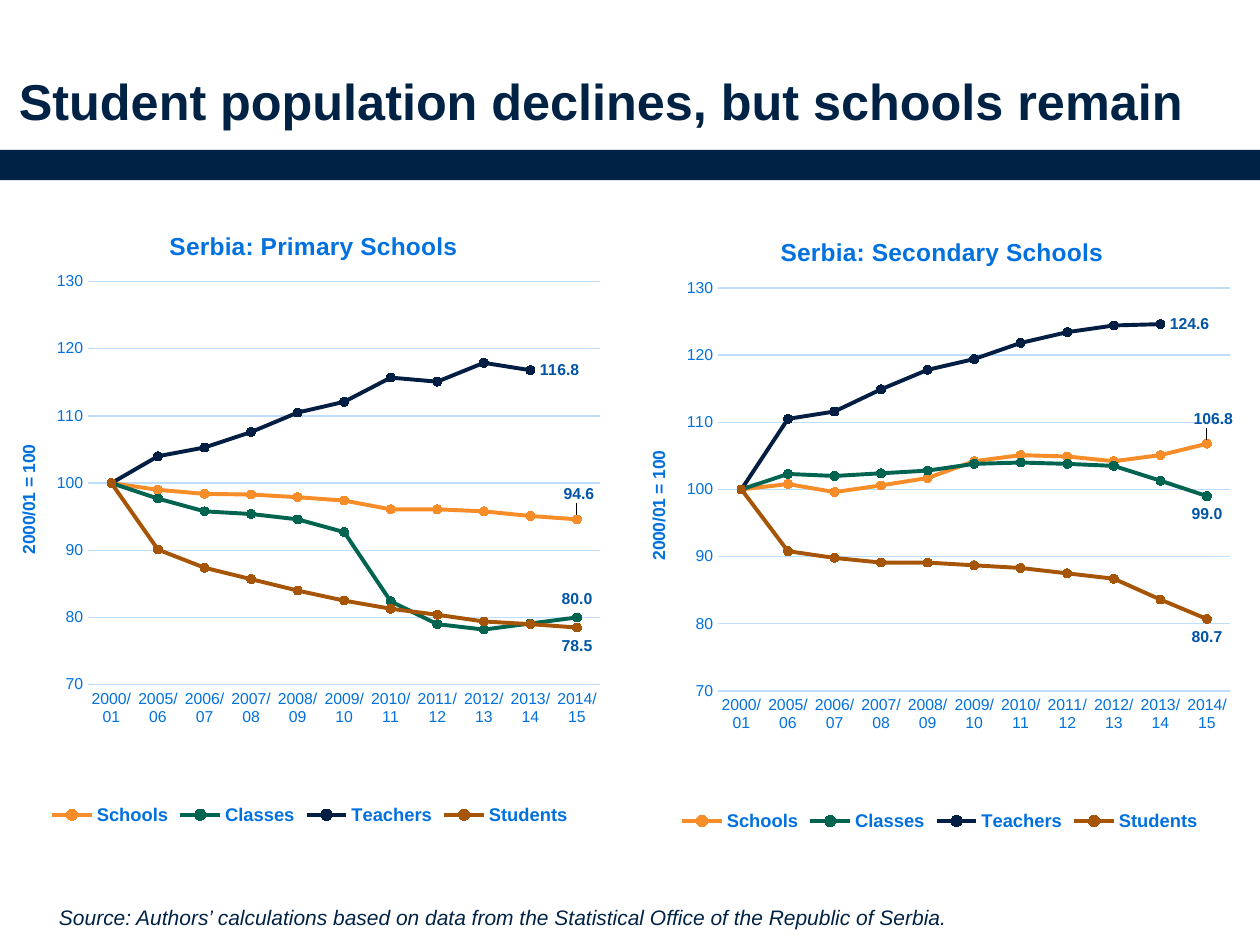
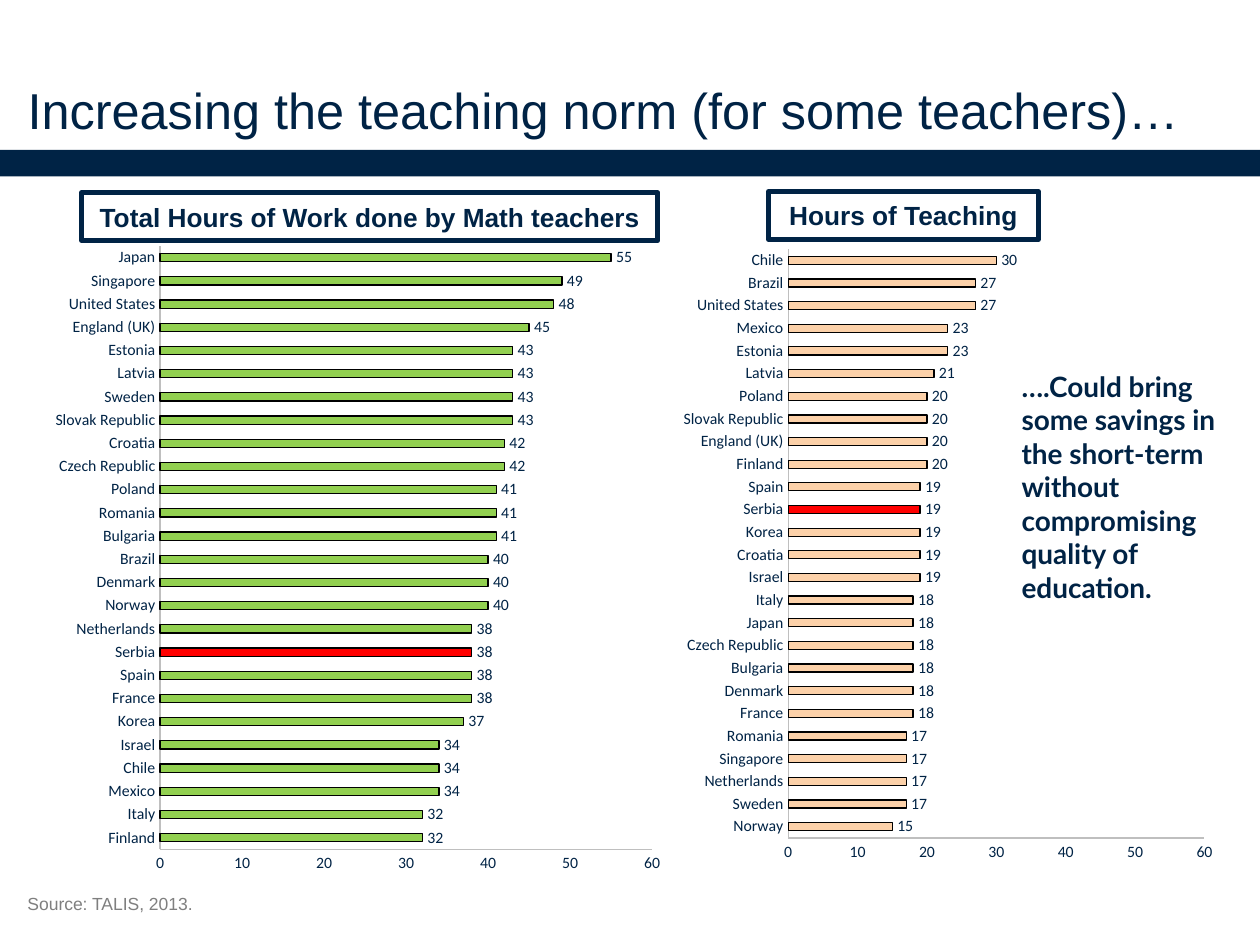
import pptx
import pptx.chart.data
import pptx.dml.color
import pptx.enum.chart
import pptx.enum.shapes
import pptx.enum.text
import pptx.oxml
import pptx.oxml.ns
import pptx.util

RGBColor = pptx.dml.color.RGBColor
Inches = pptx.util.Inches
Pt = pptx.util.Pt
ChartType = pptx.enum.chart.XL_CHART_TYPE
LabelPos = pptx.enum.chart.XL_LABEL_POSITION
Tick = pptx.enum.chart.XL_TICK_MARK
Anchor = pptx.enum.text.MSO_ANCHOR
Align = pptx.enum.text.PP_ALIGN
AutoSize = pptx.enum.text.MSO_AUTO_SIZE

NAVY = RGBColor(0x00, 0x23, 0x45)
BLUE = RGBColor(0x00, 0x71, 0xDF)
LABEL_BLUE = RGBColor(0x00, 0x55, 0xA7)
PALE_BLUE = RGBColor(0xBD, 0xDE, 0xFF)
GRAY = RGBColor(0x7F, 0x7F, 0x7F)
AXIS_GRAY = RGBColor(0xBF, 0xBF, 0xBF)
BLACK = RGBColor(0x00, 0x00, 0x00)
RED = RGBColor(0xFF, 0x00, 0x00)
GREEN = RGBColor(0x92, 0xD0, 0x50)
PEACH = RGBColor(0xFC, 0xD1, 0xA9)
SERIES_COLORS = {
    "Schools": RGBColor(0xF7, 0x8D, 0x28),
    "Classes": RGBColor(0x00, 0x64, 0x50),
    "Teachers": RGBColor(0x02, 0x1F, 0x43),
    "Students": RGBColor(0xA6, 0x54, 0x06),
}

YEARS = ["2000/01"] + [f"{y}/{y - 1999:02d}" for y in range(2005, 2015)]
PRIMARY = {
    "Schools": [100, 99.0, 98.4, 98.3, 97.9, 97.4, 96.1, 96.1, 95.8, 95.1, 94.6],
    "Classes": [100, 97.7, 95.8, 95.4, 94.6, 92.7, 82.4, 79.0, 78.2, 79.1, 80.0],
    "Teachers": [100, 104.0, 105.3, 107.6, 110.5, 112.1, 115.7, 115.1, 117.9, 116.8, None],
    "Students": [100, 90.1, 87.4, 85.7, 84.0, 82.5, 81.3, 80.4, 79.4, 79.0, 78.5],
}
SECONDARY = {
    "Schools": [100, 100.8, 99.6, 100.6, 101.7, 104.2, 105.1, 104.9, 104.2, 105.1, 106.8],
    "Classes": [100, 102.3, 102.0, 102.4, 102.8, 103.8, 104.0, 103.8, 103.5, 101.3, 99.0],
    "Teachers": [100, 110.5, 111.6, 114.9, 117.8, 119.4, 121.8, 123.4, 124.4, 124.6, None],
    "Students": [100, 90.8, 89.8, 89.1, 89.1, 88.7, 88.3, 87.5, 86.7, 83.6, 80.7],
}
WORK_HOURS = {
    "Finland": 32, "Italy": 32, "Mexico": 34, "Chile": 34, "Israel": 34,
    "Korea": 37, "France": 38, "Spain": 38, "Serbia": 38, "Netherlands": 38,
    "Norway": 40, "Denmark": 40, "Brazil": 40, "Bulgaria": 41, "Romania": 41,
    "Poland": 41, "Czech Republic": 42, "Croatia": 42, "Slovak Republic": 43,
    "Sweden": 43, "Latvia": 43, "Estonia": 43, "England (UK)": 45,
    "United States": 48, "Singapore": 49, "Japan": 55,
}
TEACHING_HOURS = {
    "Norway": 15, "Sweden": 17, "Netherlands": 17, "Singapore": 17, "Romania": 17,
    "France": 18, "Denmark": 18, "Bulgaria": 18, "Czech Republic": 18, "Japan": 18,
    "Italy": 18, "Israel": 19, "Croatia": 19, "Korea": 19, "Serbia": 19,
    "Spain": 19, "Finland": 20, "England (UK)": 20, "Slovak Republic": 20,
    "Poland": 20, "Latvia": 21, "Estonia": 23, "Mexico": 23, "United States": 27,
    "Brazil": 27, "Chile": 30,
}


def set_font(font, size, color=NAVY, name="Arial", bold=False, italic=False):
    font.size, font.name = Pt(size), name
    font.bold, font.italic = bold, italic
    font.color.rgb = color


def write(tf, text, align=None, **style):
    p = tf.paragraphs[0]
    p.alignment = align
    r = p.add_run()
    r.text = text
    set_font(r.font, **style)


def set_line(line, color, width=0.75):
    line.color.rgb = color
    line.width = Pt(width)


def set_fill(fill, color):
    fill.solid()
    fill.fore_color.rgb = color


def set_layout(parent, index, **marks):
    """Give a chart part a manual layout; index is its place among the children."""
    for old in parent.findall(pptx.oxml.ns.qn("c:layout")):
        parent.remove(old)
    tags = "".join(f'<c:{k} val="{v}"/>' for k, v in marks.items())
    parent.insert(index, pptx.oxml.parse_xml(
        f'<c:layout {pptx.oxml.ns.nsdecls("c")}>'
        f"<c:manualLayout>{tags}</c:manualLayout></c:layout>"))


class Deck:
    def __init__(self):
        self.prs = pptx.Presentation()
        self.prs.slide_width, self.prs.slide_height = Inches(10), Inches(7.5)
        self.s = None

    def slide(self, title, box, bold=False):
        first = self.s is None
        self.s = self.prs.slides.add_slide(self.prs.slide_layouts[5])
        if first:
            self.share_band()
        sp = self.s.shapes.title
        sp.left, sp.top, sp.width, sp.height = map(Inches, box)
        tf = sp.text_frame
        tf.margin_left = tf.margin_right = tf.margin_top = tf.margin_bottom = 0
        tf.vertical_anchor, tf.auto_size = Anchor.BOTTOM, AutoSize.NONE
        write(tf, title, Align.LEFT, size=28.8, bold=bold)

    def share_band(self):
        """Draw the title band and move it to the master, behind every slide."""
        band = self.rect((0, 1.19, 10, 0.21), fill=NAVY).element
        band.nvSpPr.cNvPr.set("id", "20")
        self.prs.slide_master.element.cSld.spTree.insert(2, band)

    def rect(self, box, fill=None, line=None):
        sp = self.s.shapes.add_shape(
            pptx.enum.shapes.MSO_SHAPE.RECTANGLE, *map(Inches, box))
        sp.shadow.inherit = False
        if fill is None:
            sp.fill.background()
        else:
            set_fill(sp.fill, fill)
        if line is None:
            sp.line.fill.background()
        else:
            set_line(sp.line, line, 3)
        return sp

    def heading(self, text, box):
        tf = self.rect(box, line=NAVY).text_frame
        tf.vertical_anchor, tf.word_wrap = Anchor.MIDDLE, True
        write(tf, text, Align.CENTER, size=15, bold=True)

    def text(self, text, box, wrap=True, grow=False, **style):
        tf = self.s.shapes.add_textbox(*map(Inches, box)).text_frame
        tf.word_wrap = wrap
        tf.auto_size = AutoSize.SHAPE_TO_FIT_TEXT if grow else AutoSize.NONE
        write(tf, text, **style)

    def chart(self, kind, box, categories, series, number_format, plot=None, **style):
        data = pptx.chart.data.CategoryChartData(number_format=number_format)
        data.categories = categories
        for name, values in series.items():
            data.add_series(name, values)
        chart = self.s.shapes.add_chart(kind, *map(Inches, box), data).chart
        set_font(chart.font, **style)
        chart.has_title = chart.has_legend = False
        chart.plots[0].vary_by_categories = False
        for axis in (chart.category_axis, chart.value_axis):
            axis.has_major_gridlines = False
            axis.major_tick_mark = axis.minor_tick_mark = Tick.NONE
        if plot:
            x, y, w, h = plot
            set_layout(chart.element.xpath("//c:plotArea")[0], 0, layoutTarget="inner",
                       xMode="edge", yMode="edge", x=x, y=y, w=w, h=h)
        return chart

    def trend_chart(self, title, title_x, box, series, label_spots, nudge):
        chart = self.chart(ChartType.LINE_MARKERS, box, YEARS, series, "0.0",
                           plot=(0.148, 0.129, 0.813, 0.64), size=10)
        # Title and legend
        chart.has_title = True
        write(chart.chart_title.text_frame, title, size=14, color=BLUE, bold=True)
        set_layout(chart.element.xpath("//c:chart/c:title")[0], 1,
                   xMode="edge", yMode="edge", x=title_x, y=0.04)
        chart.has_legend = True
        chart.legend.position = pptx.enum.chart.XL_LEGEND_POSITION.BOTTOM
        chart.legend.include_in_layout = False
        set_font(chart.legend.font, 10.5, BLUE, bold=True)
        # Axes
        cat, val = chart.category_axis, chart.value_axis
        for axis in (cat, val):
            set_font(axis.tick_labels.font, 9, BLUE)
        set_line(cat.format.line, PALE_BLUE)
        val.format.line.fill.background()
        val.minimum_scale, val.maximum_scale, val.major_unit = 70, 130, 10
        val.has_major_gridlines = True
        set_line(val.major_gridlines.format.line, PALE_BLUE)
        val.tick_labels.number_format = "0"
        val.tick_labels.number_format_is_linked = False
        write(val.axis_title.text_frame, "2000/01 = 100", size=10, color=BLUE, bold=True)
        chart.element.xpath("//c:valAx/c:title//a:bodyPr")[0].set("rot", "-5400000")
        # Lines, each labelled at its last value
        for ser, spot in zip(chart.plots[0].series, label_spots):
            color = SERIES_COLORS[ser.name]
            ser.smooth = False
            set_line(ser.format.line, color, 2.25)
            ser.marker.style = pptx.enum.chart.XL_MARKER_STYLE.CIRCLE
            ser.marker.size = 5
            set_fill(ser.marker.format.fill, color)
            set_line(ser.marker.format.line, color)
            ser.data_labels.show_value = False
            last = sum(v is not None for v in series[ser.name]) - 1
            label = ser.points[last].data_label
            set_font(label.font, 9, LABEL_BLUE, bold=True)
            label.position = spot
        set_layout(chart.element.xpath("//c:ser[1]//c:dLbl")[0], 1, x=nudge, y=-0.01)

    def hours_chart(self, box, hours, color, plot=None):
        chart = self.chart(ChartType.BAR_CLUSTERED, box, list(hours),
                           {"Series 1": hours.values()}, "General",
                           plot=plot, size=9, name="Calibri")
        for axis in (chart.category_axis, chart.value_axis):
            set_font(axis.tick_labels.font, 9, name="Calibri")
            set_line(axis.format.line, AXIS_GRAY)
        chart.value_axis.minimum_scale, chart.value_axis.maximum_scale = 0, 60
        chart.value_axis.major_unit = 10
        bars = chart.plots[0]
        bars.gap_width = 182
        ser = bars.series[0]
        ser.invert_if_negative = False
        serbia = ser.points[list(hours).index("Serbia")]
        for part, fill in ((ser, color), (serbia, RED)):
            set_fill(part.format.fill, fill)
            set_line(part.format.line, BLACK)
        labels = ser.data_labels
        labels.show_value = True
        labels.position = LabelPos.OUTSIDE_END
        set_font(labels.font, 9, name="Calibri")


def main():
    deck = Deck()

    # School trends
    deck.slide("Student population declines, but schools remain",
               (0.15, 0.21, 9.63, 0.83), bold=True)
    deck.rect((0, 1.22, 10, 0.21), fill=NAVY)
    deck.text("Source: Authors’ calculations based on data from the Statistical "
              "Office of the Republic of Serbia.",
              (0.37, 7.13, 7.33, 0.37), size=12, italic=True)
    up, down, right = LabelPos.ABOVE, LabelPos.BELOW, LabelPos.RIGHT
    deck.trend_chart("Serbia: Primary Schools", 0.27, (-0.04, 1.59, 5, 5),
                     PRIMARY, (up, up, right, down), nudge=0.003)
    deck.trend_chart("Serbia: Secondary Schools", 0.24, (4.96, 1.64, 5, 5),
                     SECONDARY, (up, down, right, down), nudge=0.01)

    # Teaching norm
    deck.slide("Increasing the teaching norm (for some teachers)…",
               (0.22, 0.28, 9.25, 0.83))
    deck.heading("Total Hours of Work done by Math teachers", (0.65, 1.53, 4.57, 0.38))
    deck.text("Source: TALIS, 2013.", (0.12, 7.04, 1.53, 0.27),
              wrap=False, grow=True, size=10, color=GRAY)
    deck.text("….Could bring some savings in the short-term without compromising "
              "quality of education.", (8.01, 2.88, 1.74, 1.99),
              grow=True, size=16, name="Lato", bold=True)
    deck.heading("Hours of Teaching", (6.1, 1.52, 2.14, 0.38))
    deck.hours_chart((0.34, 1.85, 5, 5.18), WORK_HOURS, GREEN)
    deck.hours_chart((5.23, 1.77, 4.52, 5.15), TEACHING_HOURS, PEACH,
                     plot=(0.227, 0.04, 0.731, 0.908))

    deck.prs.save("out.pptx")


if __name__ == "__main__":
    main()
